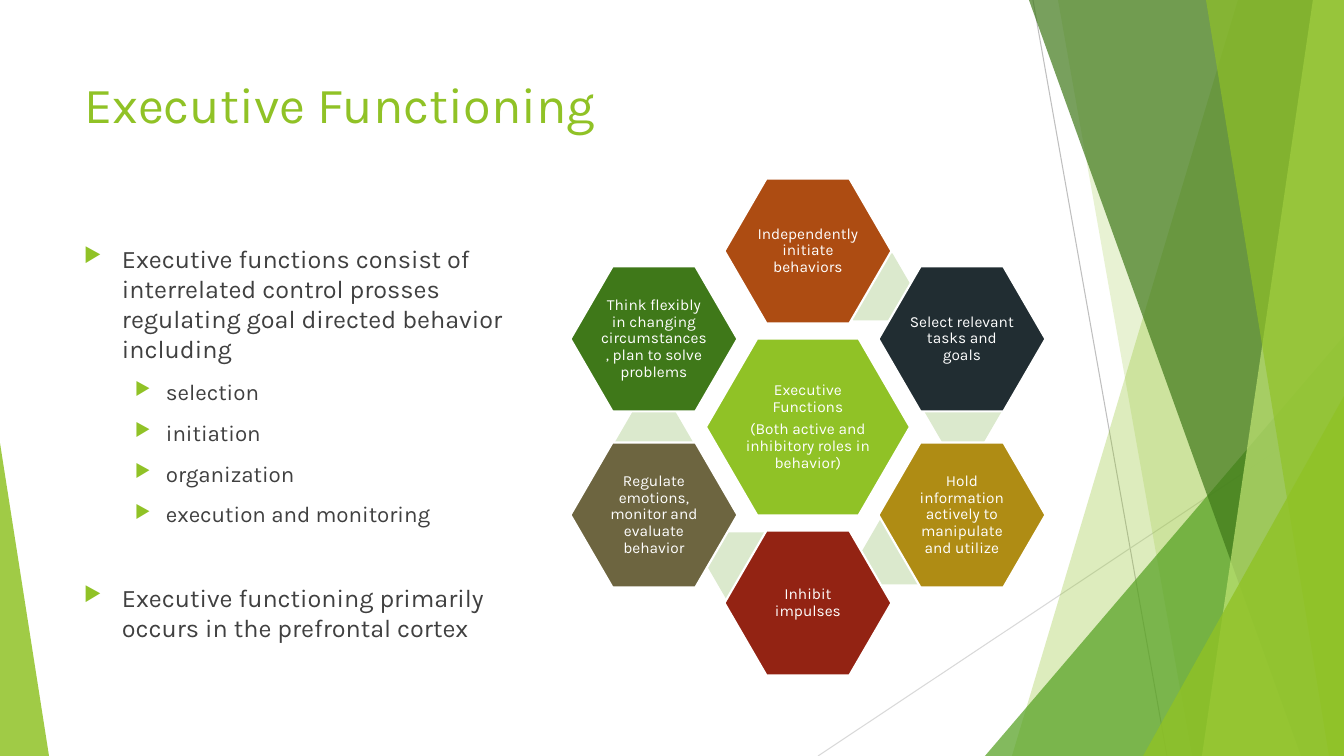
from lxml import etree
from pptx import Presentation
from pptx import util as u
from pptx.dml.color import RGBColor
from pptx.enum import shapes, text
from pptx.oxml.ns import qn

PX = 12192000 / 1344
FONT = "Karla"
LIME = RGBColor(0x90, 0xC2, 0x26)
PALE = RGBColor(0xC0, 0xE4, 0x74)
GRASS = RGBColor(0x54, 0xA0, 0x21)
GREEN = RGBColor(0x3F, 0x78, 0x19)
RUST = RGBColor(0xAD, 0x4C, 0x12)
NAVY = RGBColor(0x21, 0x2D, 0x32)
GOLD = RGBColor(0xAF, 0x8C, 0x14)
RED = RGBColor(0x93, 0x23, 0x13)
OLIVE = RGBColor(0x6D, 0x65, 0x40)
MINT = RGBColor(0xDB, 0xE9, 0xCD)
INK = RGBColor(0x40, 0x40, 0x40)
SILVER = RGBColor(0xBF, 0xBF, 0xBF)
MIST = RGBColor(0xD9, 0xD9, 0xD9)
WHITE = RGBColor(0xFF, 0xFF, 0xFF)

# colour, opacity in percent, corner points
BANDS = [
    (LIME, 30, [(1238, 0), (1344, 0), (1344, 756), (1012, 756)]),
    (LIME, 20, [(1058, 0), (1344, 0), (1344, 756), (1192, 756)]),
    (GRASS, 72, [(1344, 336), (1344, 756), (985, 756)]),
    (GREEN, 70, [(1029, 0), (1344, 0), (1344, 756), (1301, 756)]),
    (PALE, 70, [(1313, 0), (1344, 0), (1344, 756), (1202, 756)]),
    (LIME, 65, [(1206, 0), (1344, 0), (1344, 756), (1329, 756)]),
    (LIME, 80, [(1344, 396), (1344, 756), (1143, 756)]),
    (LIME, 85, [(0, 443), (49, 756), (0, 756)]),
]
RAYS = [((1033, 0), (1167, 756), SILVER), ((1344, 406), (818, 756), MIST)]

# level, space before in points, wording
POINTS = [
    (0, 0, "Executive functions consist of interrelated control prosses "
           "regulating goal directed behavior including"),
    (1, 10, "selection"),
    (1, 10, "initiation"),
    (1, 10, "organization"),
    (1, 10, "execution and monitoring"),
    (0, 39, "Executive functioning primarily occurs in the prefrontal cortex"),
]
# size in points, left margin and hanging indent in px
LEVELS = [(18, 38, -38), (16, 82, -31)]

HUB = (808, 427)
STEP_X, STEP_Y = 154, 88
# steps from the hub across and down, colour, wording
CELLS = [
    (0, -2, RUST, "Independently initiate behaviors"),
    (1, -1, NAVY, "Select relevant tasks and goals"),
    (1, 1, GOLD, "Hold information actively to manipulate and utilize"),
    (0, 2, RED, "Inhibit impulses"),
    (-1, 1, OLIVE, "Regulate emotions, monitor and evaluate behavior"),
    (-1, -1, GREEN, "Think flexibly in changing circumstances, plan to solve problems"),
]
LINKS = [(873, 287), (963, 411), (901, 551), (746, 566), (654, 442)]


def px(*vals):
    return [round(v * PX) for v in vals]


def style(obj, **vals):
    for name, val in vals.items():
        setattr(obj, name, val)


def write(para, words, size, color):
    run = para.add_run()
    run.text = words
    style(run.font, name=FONT, size=u.Pt(size))
    run.font.color.rgb = color


def paint(shape, color):
    shape.shadow.inherit = False
    shape.fill.solid()
    shape.fill.fore_color.rgb = color
    shape.line.fill.background()


def add_band(slide, color, alpha, points):
    form = slide.shapes.build_freeform(*points[0], scale=PX)
    form.add_line_segments(points[1:], close=True)
    band = form.convert_to_shape()
    paint(band, color)
    tint = band.fill._xPr.find(".//" + qn("a:srgbClr"))
    etree.SubElement(tint, qn("a:alpha"), val=str(alpha * 1000))


def add_ray(slide, start, end, color):
    ray = slide.shapes.add_connector(
        shapes.MSO_CONNECTOR.STRAIGHT, *px(*start, *end))
    ray.line.width = u.Pt(0.75)
    ray.line.color.rgb = color
    etree.SubElement(ray._element.spPr, qn("a:effectLst"))


def add_title(slide, words):
    title = slide.shapes.title
    left, top, width, height = px(74, 68, 948, 145)
    style(title, left=left, top=top, width=width, height=height)
    frame = title.text_frame
    style(frame, word_wrap=True, vertical_anchor=text.MSO_ANCHOR.TOP)
    para = frame.paragraphs[0]
    para.alignment = text.PP_ALIGN.LEFT
    write(para, words, 36, LIME)


def add_bullet(para, margin, indent):
    props = para._p.get_or_add_pPr()
    props.set("marL", str(px(margin)[0]))
    props.set("indent", str(px(indent)[0]))
    tint = etree.SubElement(props, qn("a:buClr"))
    etree.SubElement(tint, qn("a:srgbClr"), val=str(LIME))
    etree.SubElement(props, qn("a:buSzPct"), val="80000")
    etree.SubElement(props, qn("a:buChar"), char="▶")


def add_list(slide):
    frame = slide.shapes.add_textbox(*px(74, 238, 462, 427)).text_frame
    frame.word_wrap = True
    for i, (level, gap, words) in enumerate(POINTS):
        para = frame.add_paragraph() if i else frame.paragraphs[0]
        size, margin, indent = LEVELS[level]
        add_bullet(para, margin, indent)
        style(para, level=level, space_before=u.Pt(gap))
        write(para, words, size, INK)


def add_hex(slide, mid, size, color, lines=()):
    """Draw a hexagon around its middle; one with wording gets a white rim."""
    (x, y), (w, h) = mid, size
    cell = slide.shapes.add_shape(
        shapes.MSO_SHAPE.HEXAGON, *px(x - w / 2, y - h / 2, w, h))
    cell.adjustments[0] = 0.29
    paint(cell, color)
    if not lines:
        return
    cell.line.color.rgb = WHITE
    cell.line.width = u.Pt(1.5)
    frame = cell.text_frame
    pad = px(2)[0]
    style(frame, word_wrap=True, vertical_anchor=text.MSO_ANCHOR.MIDDLE,
          margin_left=pad, margin_right=pad, margin_top=pad, margin_bottom=pad)
    for i, words in enumerate(lines):
        para = frame.add_paragraph() if i else frame.paragraphs[0]
        style(para, alignment=text.PP_ALIGN.CENTER, line_spacing=0.9,
              space_after=u.Pt(4))
        write(para, words, 11, WHITE)


def add_wheel(slide):
    add_hex(slide, HUB, (204, 177), LIME,
            ["Executive Functions",
             "(Both active and inhibitory roles in behavior)"])
    for mid in LINKS:
        add_hex(slide, mid, (78, 67), MINT)
    for across, down, color, words in CELLS:
        mid = HUB[0] + across * STEP_X, HUB[1] + down * STEP_Y
        add_hex(slide, mid, (167, 145), color, [words])


def main():
    deck = Presentation()
    deck.slide_width, deck.slide_height = px(1344, 756)
    slide = deck.slides.add_slide(deck.slide_layouts[5])
    for ray in RAYS:
        add_ray(slide, *ray)
    for band in BANDS:
        add_band(slide, *band)
    add_title(slide, "Executive Functioning")
    add_list(slide)
    add_wheel(slide)
    deck.save("out.pptx")


if __name__ == "__main__":
    main()
